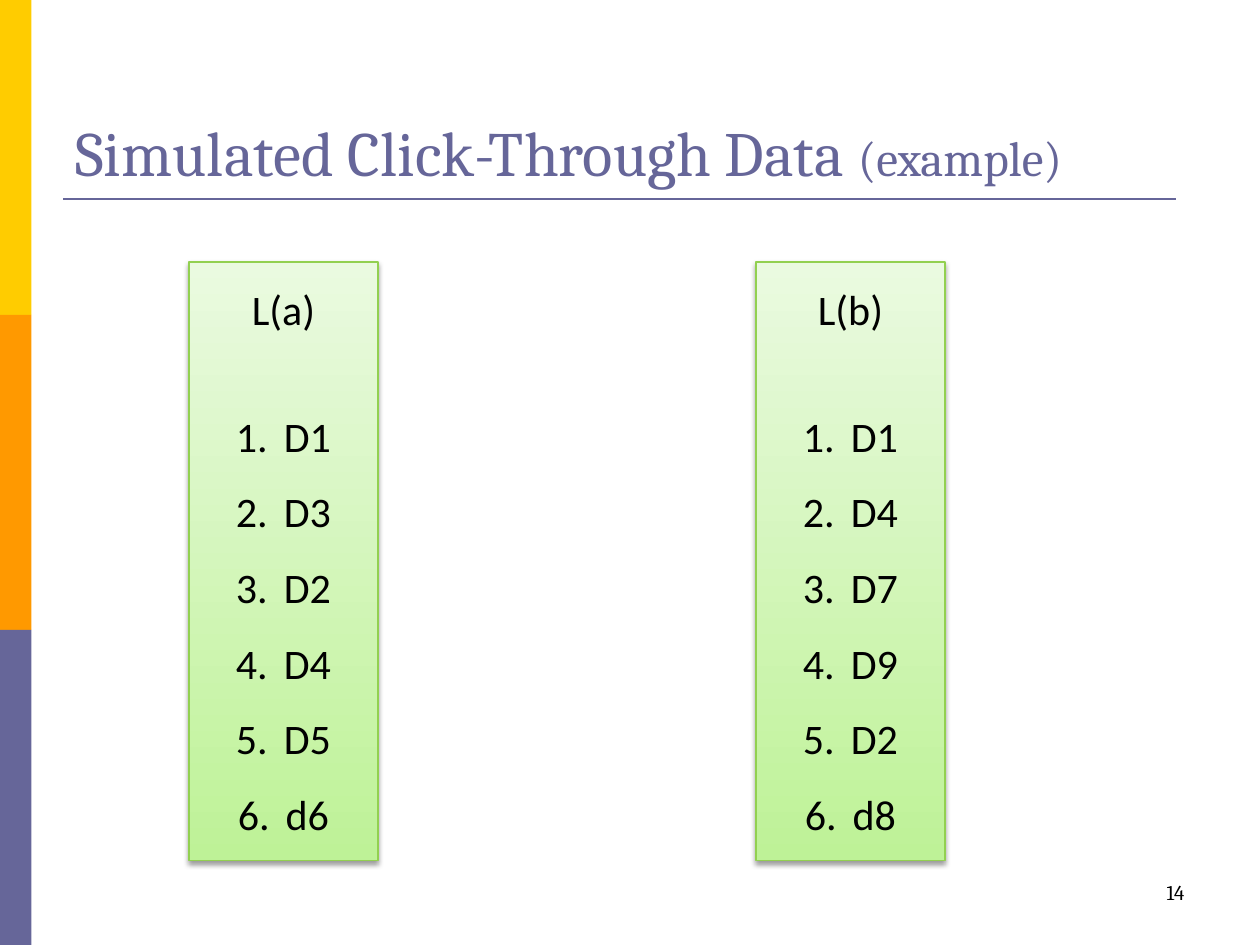
from lxml import etree
from pptx import Presentation
from pptx.dml.color import RGBColor
from pptx.enum import shapes, text
from pptx.oxml.ns import qn
from pptx.util import Inches, Pt

COLORS = {
    "yellow": "FFCC00",
    "orange": "FF9900",
    "purple": "666699",
    "black": "000000",
    "border": "92D050",
    "green": "BEF297",
    "pale": "EAFAE0",
}


def rgb(name):
    return RGBColor.from_string(COLORS[name])


class SlideBuilder:
    heading_font = "Cambria"
    body_font = "Calibri"

    def __init__(self, slide):
        self.shapes = slide.shapes

    def style(self, r, size, color, font):
        r.font.size = Pt(size)
        r.font.name = font
        r.font.color.rgb = rgb(color)

    def rect(self, x, y, w, h):
        sp = self.shapes.add_shape(
            shapes.MSO_SHAPE.RECTANGLE, Inches(x), Inches(y), Inches(w), Inches(h))
        sp.shadow.inherit = False
        return sp

    def band(self, x, y, w, h, color):
        sp = self.rect(x, y, w, h)
        sp.fill.solid()
        sp.fill.fore_color.rgb = rgb(color)
        sp.line.fill.background()

    def rule(self, x1, x2, y, color):
        line = self.shapes.add_connector(
            shapes.MSO_CONNECTOR.STRAIGHT, Inches(x1), Inches(y), Inches(x2), Inches(y))
        line.line.color.rgb = rgb(color)
        line.line.width = Pt(1.5)
        etree.SubElement(line._element.spPr, qn("a:effectLst"))

    def textbox(self, x, y, w, h, runs, color, anchor, align):
        tf = self.shapes.add_textbox(Inches(x), Inches(y), Inches(w), Inches(h)).text_frame
        tf.word_wrap = True
        tf.vertical_anchor = anchor
        p = tf.paragraphs[0]
        p.alignment = align
        for content, size in runs:
            r = p.add_run()
            r.text = content
            self.style(r, size, color, self.heading_font)

    def drop_shadow(self, sp):
        effects = sp._element.spPr.find(qn("a:effectLst"))
        shadow = etree.SubElement(
            effects, qn("a:outerShdw"), blurRad=str(Pt(3.1)), dist=str(Pt(1.6)),
            dir="5400000", rotWithShape="0")
        color = etree.SubElement(shadow, qn("a:srgbClr"), val=COLORS["black"])
        etree.SubElement(color, qn("a:alpha"), val="38000")

    def number(self, p):
        p.line_spacing = 1.5
        pPr = p._p.get_or_add_pPr()
        pPr.set("marL", str(Inches(0.38)))
        pPr.set("indent", str(Inches(-0.38)))
        etree.SubElement(pPr, qn("a:buFont"), typeface="+mj-lt")
        etree.SubElement(pPr, qn("a:buAutoNum"), type="arabicPeriod")

    def ranked_list(self, x, y, w, h, heading, items):
        sp = self.rect(x, y, w, h)
        sp.fill.gradient()
        sp.fill.gradient_angle = 90
        for stop, color, position in zip(sp.fill.gradient_stops, ("green", "pale"), (0, 1)):
            stop.color.rgb = rgb(color)
            stop.position = position
        sp.line.color.rgb = rgb("border")
        sp.line.width = Pt(0.75)
        self.drop_shadow(sp)
        tf = sp.text_frame
        tf.word_wrap = True
        tf.vertical_anchor = text.MSO_ANCHOR.MIDDLE
        tf.text = "\n".join([heading, *items])
        for p in tf.paragraphs:
            p.alignment = text.PP_ALIGN.CENTER
            self.style(p.runs[0], 24, "black", self.body_font)
        tf.paragraphs[0].space_after = Pt(29)
        for p in tf.paragraphs[1:]:
            self.number(p)


def main():
    prs = Presentation()
    prs.slide_width, prs.slide_height = Inches(10), Inches(7.5)
    s = SlideBuilder(prs.slides.add_slide(prs.slide_layouts[6]))

    for i, color in enumerate(("yellow", "orange", "purple")):
        s.band(0, 2.5 * i, 0.25, 2.5, color)
    s.rule(0.5, 9.33, 1.58, "purple")
    s.textbox(0.5, 0.3, 9, 1.25,
              [("Simulated Click-Through Data ", 36), ("(example)", 28)],
              "purple", text.MSO_ANCHOR.BOTTOM, text.PP_ALIGN.LEFT)
    s.textbox(7.17, 6.83, 2.33, 0.5, [("14", 12)],
              "black", text.MSO_ANCHOR.MIDDLE, text.PP_ALIGN.RIGHT)

    rankings = {
        "L(a)": ["D1", "D3", "D2", "D4", "D5", "d6"],
        "L(b)": ["D1", "D4", "D7", "D9", "D2", "d8"],
    }
    for i, (heading, items) in enumerate(rankings.items()):
        s.ranked_list(1.5 + 4.5 * i, 2.08, 1.5, 4.75, heading, items)

    prs.save("out.pptx")


if __name__ == "__main__":
    main()
